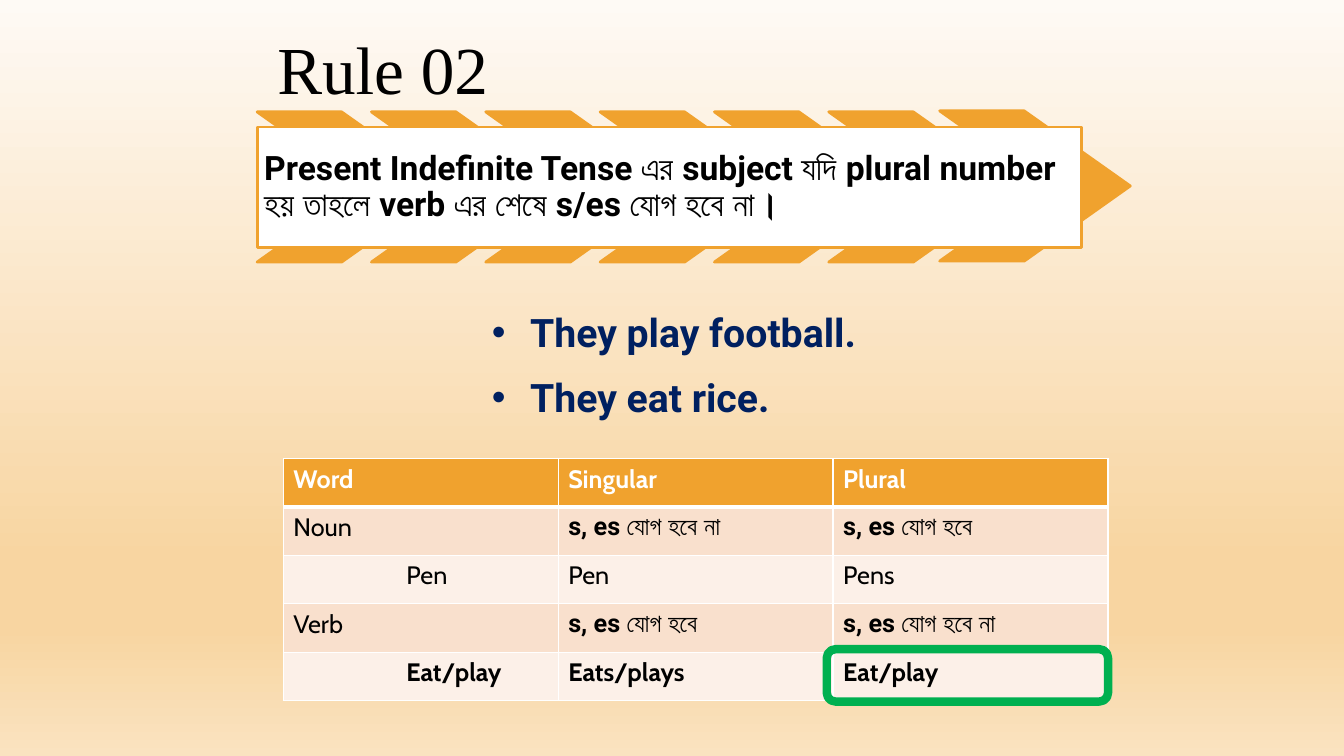
from dataclasses import dataclass

from pptx import Presentation
from pptx.dml.color import RGBColor
from pptx.enum.shapes import MSO_SHAPE
from pptx.enum.text import MSO_ANCHOR, MSO_AUTO_SIZE, PP_ALIGN
from pptx.oxml import parse_xml
from pptx.oxml.ns import nsdecls, qn
from pptx.util import Inches, Pt

CHEVRON, RECT, ROUND = MSO_SHAPE.CHEVRON, MSO_SHAPE.RECTANGLE, MSO_SHAPE.ROUNDED_RECTANGLE
TOP, MIDDLE, BOTTOM = MSO_ANCHOR.TOP, MSO_ANCHOR.MIDDLE, MSO_ANCHOR.BOTTOM
LEFT, GROW, FIXED = PP_ALIGN.LEFT, MSO_AUTO_SIZE.SHAPE_TO_FIT_TEXT, MSO_AUTO_SIZE.NONE

BLACK = RGBColor(0x00, 0x00, 0x00)
WHITE = RGBColor(0xFF, 0xFF, 0xFF)
ORANGE = RGBColor(0xF0, 0xA2, 0x2E)
NAVY = RGBColor(0x00, 0x20, 0x60)
GREEN = RGBColor(0x00, 0xB0, 0x50)
PEACH = RGBColor(0xF9, 0xE0, 0xCD)
CREAM = RGBColor(0xFC, 0xF0, 0xE8)
SKY = [(0, RGBColor(0xFE, 0xFA, 0xF5)), (74, RGBColor(0xF8, 0xD5, 0xA1)),
       (83, RGBColor(0xF8, 0xD5, 0xA1)), (100, RGBColor(0xFA, 0xE3, 0xC0))]


@dataclass
class Box:
    left: float
    top: float
    width: float
    height: float

    def emu(self):
        return [Inches(v) for v in (self.left, self.top, self.width, self.height)]


@dataclass
class Cell:
    text: str
    font: str = "Cabin"
    bold: bool = False
    indent: float = 0


def write(frame, *lines, font="Cabin", size=18, color=BLACK, bold=False,
          spacing=1.0, after=0, indent=0, bullet=False):
    for i, line in enumerate(lines):
        para = frame.paragraphs[0] if i == 0 else frame.add_paragraph()
        para.alignment = LEFT
        para.line_spacing = spacing
        para.space_before, para.space_after = Pt(0), Pt(after)
        props = para._p.get_or_add_pPr()
        props.set("marL", str(Inches(indent)))
        props.set("indent", str(Inches(-indent if bullet else 0)))
        if bullet:
            props.append(parse_xml(f'<a:buFont {nsdecls("a")} typeface="Arial"/>'))
            props.append(parse_xml(f'<a:buChar {nsdecls("a")} char="•"/>'))
        run = para.add_run()
        run.text = line
        run.font.name, run.font.size = font, Pt(size)
        run.font.bold, run.font.color.rgb = bold, color


def set_frame(frame, inset: float, anchor, fit=FIXED):
    frame.word_wrap = True
    frame.auto_size = fit
    frame.vertical_anchor = anchor
    frame.margin_left = frame.margin_right = Inches(inset)
    frame.margin_top = frame.margin_bottom = Inches(inset)


def add_box(slide, kind, box: Box, fill, line, width: float):
    shape = slide.shapes.add_shape(kind, *box.emu())
    shape.shadow.inherit = False
    if fill is None:
        shape.fill.background()
    else:
        shape.fill.solid()
        shape.fill.fore_color.rgb = fill
    shape.line.color.rgb, shape.line.width = line, Pt(width)
    return shape


def set_back(slide):
    fill = slide.background.fill
    fill.gradient()
    fill.gradient_angle = 270
    stops = slide.element.find(".//" + qn("a:gsLst"))
    for stop in list(stops):
        stops.remove(stop)
    for pos, color in SKY:
        stops.append(parse_xml(f'<a:gs {nsdecls("a")} pos="{pos * 1000}">'
                               f'<a:srgbClr val="{color}"/></a:gs>'))


def set_edges(cell, top: float, bottom: float):
    props = cell._tc.get_or_add_tcPr()
    edges = [("lnL", 1), ("lnR", 1), ("lnT", top), ("lnB", bottom)]
    for i, (tag, width) in enumerate(edges):
        props.insert(i, parse_xml(
            f'<a:{tag} {nsdecls("a")} w="{Pt(width)}"><a:solidFill>'
            f'<a:srgbClr val="{WHITE}"/></a:solidFill></a:{tag}>'))


def add_grid(slide, box: Box, rows: list[list[Cell]]):
    table = slide.shapes.add_table(len(rows), len(rows[0]), *box.emu()).table
    table.horz_banding = False
    for r, row in enumerate(rows):
        table.rows[r].height = Inches(box.height / len(rows))
        fill = ORANGE if r == 0 else PEACH if r % 2 else CREAM
        for c, item in enumerate(row):
            cell = table.cell(r, c)
            cell.fill.solid()
            cell.fill.fore_color.rgb = fill
            set_edges(cell, 3 if r == 1 else 1, 3 if r == 0 else 1)
            write(cell.text_frame, item.text, font=item.font, bold=item.bold,
                  color=WHITE if r == 0 else BLACK, indent=item.indent)


def main():
    deck = Presentation()
    deck.slide_width, deck.slide_height = Inches(13.33), Inches(7.5)
    slide = deck.slides.add_slide(deck.slide_layouts[5])
    set_back(slide)

    # Title
    title = slide.shapes.title
    title.left, title.top, title.width, title.height = Box(2.55, 0.55, 8.07, 0.73).emu()
    set_frame(title.text_frame, 0.2, BOTTOM)
    write(title.text_frame, "Rule 02", font="Times New Roman", size=48, spacing=0.9)

    # Chevron band; the last one sits slightly off the pitch
    band = [Box(2.55 + 1.134 * i, 1.11, 1.89, 1.49) for i in range(6)]
    band.append(Box(9.32, 1.1, 1.89, 1.49))
    for box in band:
        add_box(slide, CHEVRON, box, ORANGE, ORANGE, 2).adjustments[0] = 0.706

    # Rule
    rule = add_box(slide, RECT, Box(2.55, 1.26, 8.18, 1.2), WHITE, ORANGE, 2)
    set_frame(rule.text_frame, 0.07, MIDDLE)
    write(rule.text_frame,
          "Present Indefinite Tense এর subject যদি plural number হয় তাহলে verb এর শেষে s/es যোগ হবে না।",
          font="Roboto", size=24, bold=True, spacing=0.9)

    # Word table
    yes, no = (Cell(t, "Roboto", True) for t in ("s, es যোগ হবে", "s, es যোগ হবে না"))
    add_grid(slide, Box(2.81, 4.55, 8.18, 2.4), [
        [Cell(t, bold=True) for t in ("Word", "Singular", "Plural")],
        [Cell("Noun"), no, yes],
        [Cell("Pen", indent=1.12), Cell("Pen"), Cell("Pens")],
        [Cell("Verb"), yes, no],
        [Cell("Eat/play", bold=True, indent=1.12), Cell("Eats/plays", bold=True),
         Cell("Eat/play", bold=True)],
    ])

    # Examples
    samples = slide.shapes.add_textbox(*Box(4.78, 2.94, 4.29, 1.28).emu()).text_frame
    set_frame(samples, 0.1, TOP, GROW)
    samples.margin_top = samples.margin_bottom = Inches(0.05)
    write(samples, "They play football.", "They eat rice.", font="Roboto", size=28,
          color=NAVY, bold=True, spacing=1.15, after=8, indent=0.38, bullet=True)

    # Highlight on the plural verb
    add_box(slide, ROUND, Box(8.2, 6.44, 2.79, 0.52), None, GREEN, 6)

    deck.save("out.pptx")


if __name__ == "__main__":
    main()
